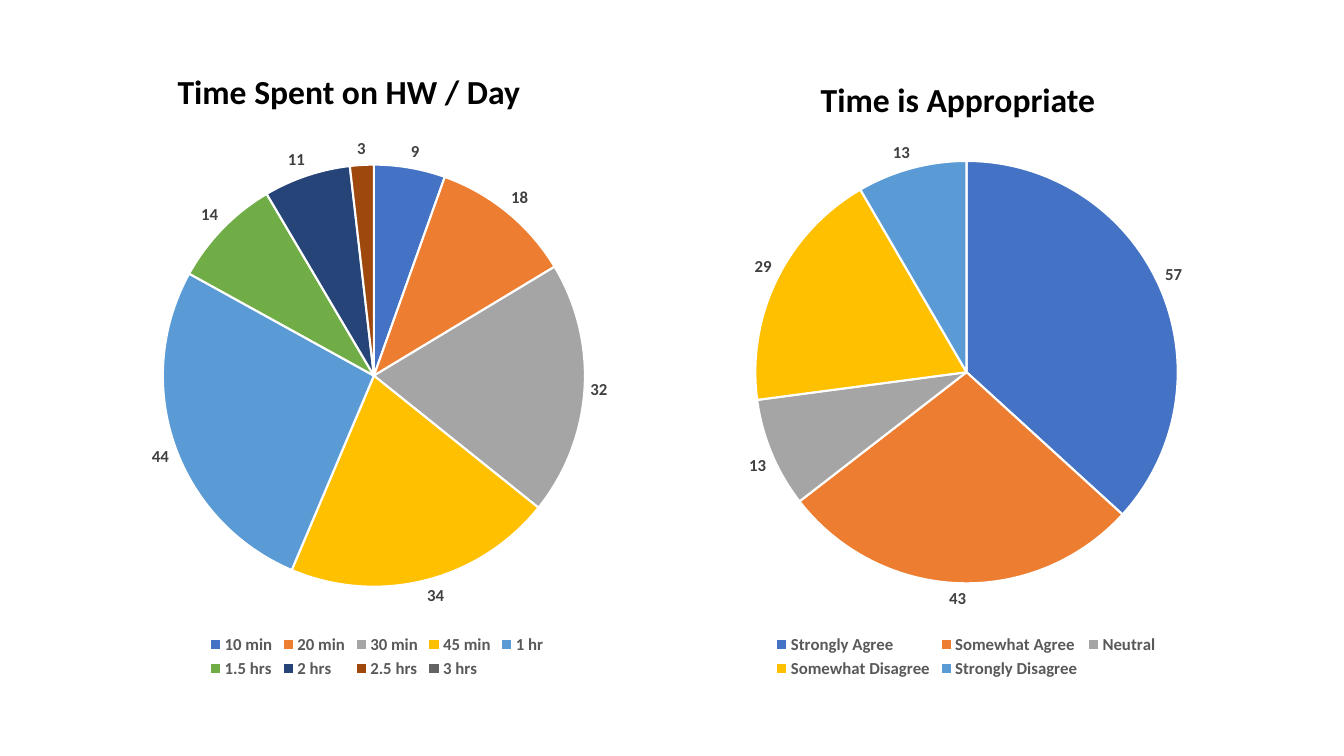
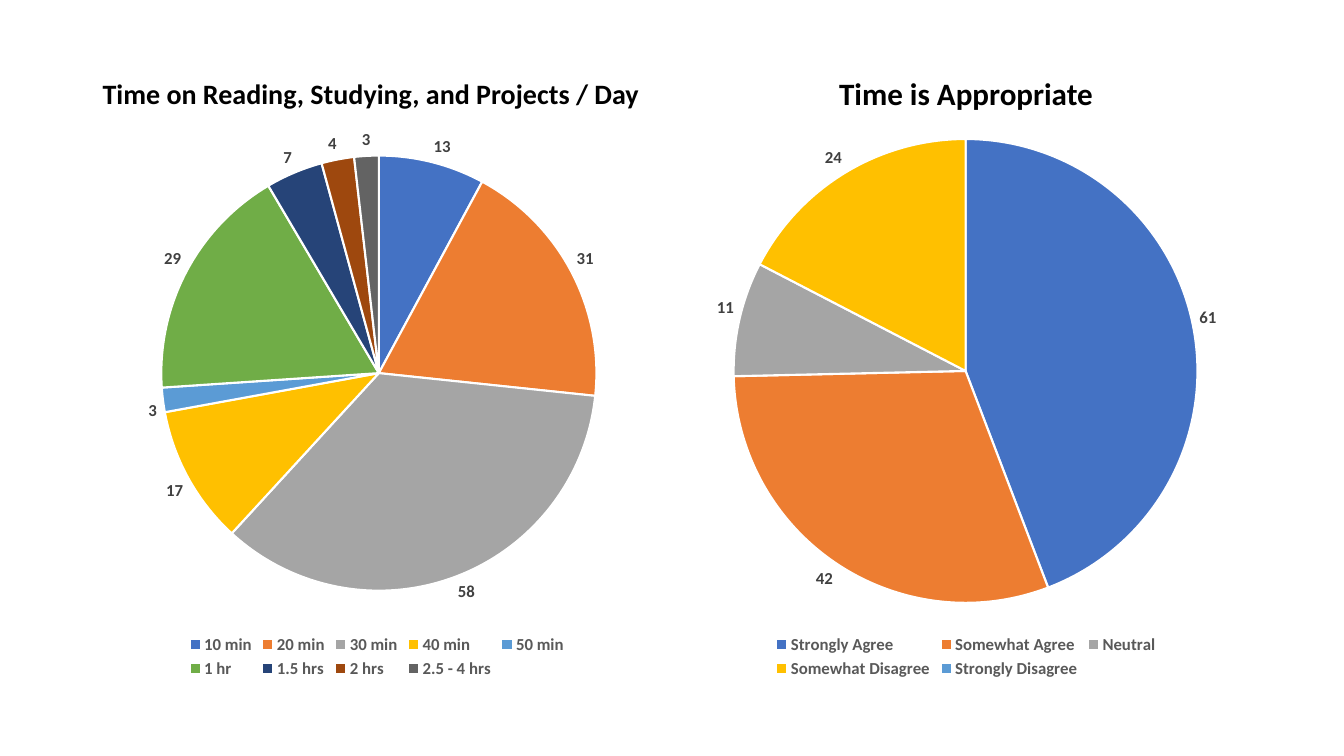
import pptx
import pptx.chart.data
import pptx.dml.color
import pptx.enum.chart
import pptx.enum.text
import pptx.util
from dataclasses import dataclass
from typing import Any, Optional

Pt = pptx.util.Pt
RGB = pptx.dml.color.RGBColor
Align = pptx.enum.text.PP_ALIGN


@dataclass(frozen=True)
class Theme:
    font: str = "Calibri"
    ink: str = "000000"
    paper: str = "FFFFFF"
    label: str = "404040"
    legend: str = "595959"
    slices: tuple[str, ...] = (
        "4472C4", "ED7D31", "A5A5A5", "FFC000", "5B9BD5",
        "70AD47", "264478", "9E480E", "636363",
    )
    base: float = 10
    small: float = 12
    edge: float = 1.5


@dataclass(frozen=True)
class Title:
    text: str
    left: float
    top: float
    width: float
    height: float
    size: float
    align: Any = Align.CENTER
    lines: float = 0.9
    inset: float = 7.2


@dataclass(frozen=True)
class Pie:
    left: float
    top: float
    width: float
    names: tuple[str, ...]
    counts: tuple[Optional[int], ...]


@dataclass(frozen=True)
class Panel:
    title: Title
    pie: Pie


THEME = Theme()
WIDTH, HEIGHT = 960, 540
FLOOR = 487.4
LEFT, RIGHT = 66.2, 486
WIDE_L, WIDE_R = 406.1, 408.2
HIGH, LOW = 82.8, 89.3

VIEWS = ("Strongly Agree", "Somewhat Agree", "Neutral",
         "Somewhat Disagree", "Strongly Disagree")
WORK = ("10 min", "20 min", "30 min", "45 min", "1 hr",
        "1.5 hrs", "2 hrs ", "2.5 hrs", "3 hrs")
STUDY = ("10 min", "20 min", "30 min", "40 min", "50 min",
         "1 hr", "1.5 hrs", "2 hrs", "2.5 - 4 hrs")

SLIDES = (
    (
        Panel(Title("Time Spent on HW / Day", LEFT, 49.7, WIDE_L, 33.8, 24,
                    inset=47.2),
              Pie(LEFT, LOW, WIDE_L, WORK,
                  (9, 18, 32, 34, 44, 14, 11, 3, None))),
        Panel(Title("Time is Appropriate", 480.2, 49.7, WIDE_R, 39.6, 24),
              Pie(RIGHT, LOW, WIDE_R, VIEWS, (57, 43, 13, 29, 13))),
    ),
    (
        Panel(Title("Time on Reading, Studying, and Projects / Day",
                    LEFT, 43.2, WIDE_L, 39.6, 20, Align.LEFT),
              Pie(LEFT, HIGH, WIDE_L, STUDY,
                  (13, 31, 58, 17, 3, 29, 7, 4, 3))),
        Panel(Title("Time is Appropriate", RIGHT, 53.3, WIDE_R, 29.5, 22.2,
                    lines=0.8),
              Pie(RIGHT, HIGH, WIDE_R, VIEWS, (61, 42, 11, 24, None))),
    ),
)


def apply(item: Any, values: dict[str, Any]) -> None:
    for name, value in values.items():
        setattr(item, name, value)


def set_font(font: Any, size: float, color: str, bold: bool = True) -> None:
    apply(font, {"name": THEME.font, "size": Pt(size), "bold": bold})
    font.color.rgb = RGB.from_string(color)


def add_title(slide: Any, title: Title) -> None:
    box = slide.shapes.add_textbox(
        Pt(title.left), Pt(title.top), Pt(title.width), Pt(title.height))
    frame = box.text_frame
    apply(frame, {
        "word_wrap": True,
        "vertical_anchor": pptx.enum.text.MSO_ANCHOR.BOTTOM,
        "margin_right": Pt(title.inset),
    })
    para = frame.paragraphs[0]
    apply(para, {
        "alignment": title.align,
        "line_spacing": title.lines,
        "space_before": Pt(10),
    })
    run = para.add_run()
    run.text = title.text
    set_font(run.font, title.size, THEME.ink)


def add_pie(slide: Any, pie: Pie) -> None:
    data = pptx.chart.data.CategoryChartData()
    data.categories = pie.names
    data.add_series("Series 1", pie.counts)
    chart = slide.shapes.add_chart(
        pptx.enum.chart.XL_CHART_TYPE.PIE, Pt(pie.left), Pt(pie.top),
        Pt(pie.width), Pt(FLOOR - pie.top), data).chart
    apply(chart, {"has_title": False, "has_legend": True})
    set_font(chart.font, THEME.base, THEME.ink, False)
    apply(chart.legend, {
        "position": pptx.enum.chart.XL_LEGEND_POSITION.BOTTOM,
        "include_in_layout": False,
    })
    set_font(chart.legend.font, THEME.small, THEME.legend)

    plot = chart.plots[0]
    plot.vary_by_categories = True
    series = plot.series[0]
    labels = series.data_labels
    apply(labels, {
        "show_value": True,
        "show_percentage": False,
        "position": pptx.enum.chart.XL_LABEL_POSITION.OUTSIDE_END,
    })
    set_font(labels.font, THEME.small, THEME.label)
    for index, color in enumerate(THEME.slices[:len(pie.names)]):
        form = series.points[index].format
        form.fill.solid()
        form.fill.fore_color.rgb = RGB.from_string(color)
        form.line.color.rgb = RGB.from_string(THEME.paper)
        form.line.width = Pt(THEME.edge)


def main() -> None:
    deck = pptx.Presentation()
    apply(deck, {"slide_width": Pt(WIDTH), "slide_height": Pt(HEIGHT)})
    for panels in SLIDES:
        slide = deck.slides.add_slide(deck.slide_layouts[6])
        for panel in panels:
            add_title(slide, panel.title)
            add_pie(slide, panel.pie)
    deck.save("out.pptx")


if __name__ == "__main__":
    main()
